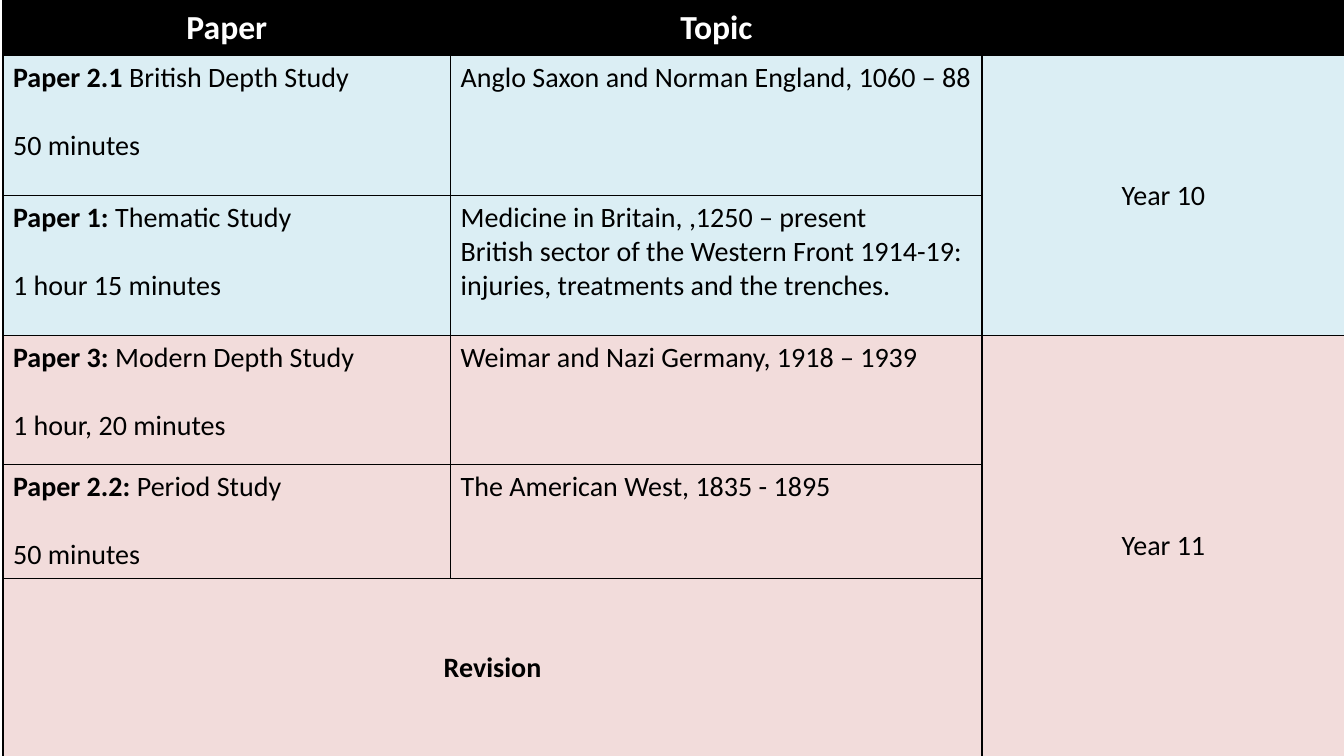
from dataclasses import dataclass

from lxml.etree import SubElement
from pptx import Presentation
from pptx.dml.color import RGBColor
from pptx.enum.text import MSO_ANCHOR, PP_ALIGN
from pptx.oxml.ns import qn
from pptx.util import Inches, Pt


@dataclass(frozen=True)
class Theme:
    font: str = "Calibri"
    header_size: int = 24
    body_size: int = 20
    line_gap: float = 24.4
    border_width: int = 1
    black: str = "000000"
    white: str = "FFFFFF"
    year_10: str = "DBEEF4"
    year_11: str = "F2DCDB"


THEME = Theme()
COLUMN_WIDTHS = (4.44, 5.27, 3.6)
ROW_HEIGHTS = (0.55, 1.39, 1.39, 1.28, 1.13, 1.77)
HEADERS = ("Paper", "Topic")

# Paper name, kind of study, length of the exam, topics
PAPERS = (
    ("Paper 2.1 ", "British Depth Study", "50 minutes",
     ("Anglo Saxon and Norman England, 1060 – 88",)),
    ("Paper 1: ", "Thematic Study", "1 hour 15 minutes",
     ("Medicine in Britain, ,1250 – present",
      "British sector of the Western Front 1914-19: injuries, treatments and the trenches.")),
    ("Paper 3: ", "Modern Depth Study", "1 hour, 20 minutes",
     ("Weimar and Nazi Germany, 1918 – 1939",)),
    ("Paper 2.2: ", "Period Study", "50 minutes",
     ("The American West, 1835 - 1895",)),
)

# Label, first row, last row, fill
YEARS = (
    ("Year 10", 1, 2, THEME.year_10),
    ("Year 11", 3, 5, THEME.year_11),
)


def style_cell(cell, fill):
    """Give the cell thin black borders and a solid fill."""
    properties = cell._tc.get_or_add_tcPr()
    for side in ("lnL", "lnR", "lnT", "lnB"):
        line = SubElement(properties, qn(f"a:{side}"), w=str(Pt(THEME.border_width)))
        line_fill = SubElement(line, qn("a:solidFill"))
        SubElement(line_fill, qn("a:srgbClr"), val=THEME.black)
    cell.fill.solid()
    cell.fill.fore_color.rgb = RGBColor.from_string(fill)


def add_span(para, text, size=THEME.body_size, color=THEME.black, bold=False):
    span = para.add_run()
    span.text = text
    span.font.name = THEME.font
    span.font.size = Pt(size)
    span.font.bold = bold
    span.font.color.rgb = RGBColor.from_string(color)


def write_centred(cell, text, **look):
    cell.vertical_anchor = MSO_ANCHOR.MIDDLE
    para = cell.text_frame.paragraphs[0]
    para.alignment = PP_ALIGN.CENTER
    add_span(para, text, **look)


def write_paper(cell, name, study, duration):
    frame = cell.text_frame
    add_span(frame.paragraphs[0], name, bold=True)
    add_span(frame.paragraphs[0], study)
    para = frame.add_paragraph()
    para.space_before = Pt(THEME.line_gap)
    add_span(para, duration)


def write_topics(cell, topics):
    frame = cell.text_frame
    for index, topic in enumerate(topics):
        para = frame.add_paragraph() if index else frame.paragraphs[0]
        add_span(para, topic)


def add_course_table(page):
    frame = page.shapes.add_table(
        len(ROW_HEIGHTS), len(COLUMN_WIDTHS), Inches(0.03), Inches(0),
        Inches(sum(COLUMN_WIDTHS)), Inches(sum(ROW_HEIGHTS)))
    table = frame.table
    for column, width in zip(table.columns, COLUMN_WIDTHS):
        column.width = Inches(width)
    for row, height in zip(table.rows, ROW_HEIGHTS):
        row.height = Inches(height)
    return table


def main():
    deck = Presentation()
    deck.slide_width, deck.slide_height = Inches(13.33), Inches(7.5)
    page = deck.slides.add_slide(deck.slide_layouts[6])
    table = add_course_table(page)

    # Header row
    for cell in table.rows[0].cells:
        style_cell(cell, THEME.black)
    for column, title in enumerate(HEADERS):
        write_centred(table.cell(0, column), title, size=THEME.header_size,
                      color=THEME.white, bold=True)

    # Year bands with their merged label cells
    for label, first, last, fill in YEARS:
        for row in range(first, last + 1):
            for cell in table.rows[row].cells:
                style_cell(cell, fill)
        table.cell(first, 2).merge(table.cell(last, 2))
        write_centred(table.cell(first, 2), label)

    # Papers and their topics
    for row, (name, study, duration, topics) in enumerate(PAPERS, start=1):
        write_paper(table.cell(row, 0), name, study, duration)
        write_topics(table.cell(row, 1), topics)

    # Revision row across both columns
    table.cell(5, 0).merge(table.cell(5, 1))
    write_centred(table.cell(5, 0), "Revision", bold=True)

    deck.save("out.pptx")


if __name__ == "__main__":
    main()
